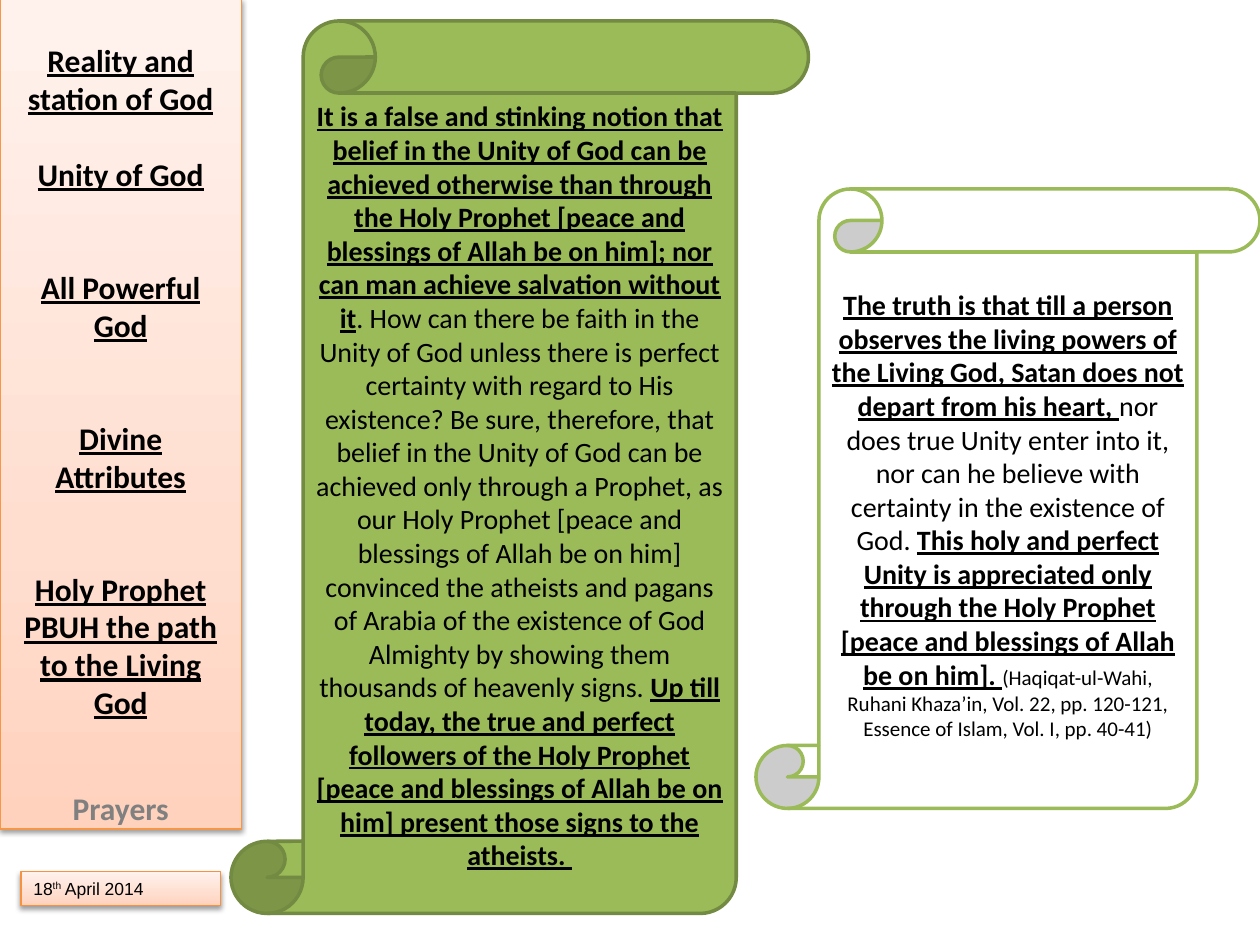
import copy

import pptx
import pptx.dml.color
import pptx.enum.shapes
import pptx.enum.text
import pptx.oxml
import pptx.oxml.ns
import pptx.util

Pt = pptx.util.Pt
SHAPES = pptx.enum.shapes.MSO_SHAPE
ALIGN = pptx.enum.text.PP_ALIGN
ANCHOR = pptx.enum.text.MSO_ANCHOR

PEACH_STOPS = [(0, "FFD2BD"), (0.35, "FFDED0"), (1, "FFF2ED")]
SHADOW_XML = (
    f'<a:outerShdw {pptx.oxml.ns.nsdecls("a")} blurRad="{Pt(3.1)}" dist="{Pt(1.6)}" '
    'dir="5400000" rotWithShape="0">'
    '<a:srgbClr val="000000"><a:alpha val="38000"/></a:srgbClr></a:outerShdw>'
)

# Topic and the space above it
TOPICS = [
    ("Reality and station of God", 0),
    ("Unity of God", 22),
    ("All Powerful God", 43),
    ("Divine Attributes", 43),
    ("Holy Prophet PBUH the path to the Living God", 43),
    ("Prayers", 39),
]
CURRENT_TOPIC = "Prayers"

# Passage parts: text, size, emphasised
NOTION = [
    ("It is a false and stinking notion that belief in the Unity of God can be achieved "
     "otherwise than through the Holy Prophet [peace and blessings of Allah be on him]; "
     "nor can man achieve salvation without it", 16, True),
    (". How can there be faith in the Unity of God unless there is perfect certainty with "
     "regard to His existence? Be sure, therefore, that belief in the Unity of God can be "
     "achieved only through a Prophet, as our Holy Prophet [peace and blessings of Allah be "
     "on him] convinced the atheists and pagans of Arabia of the existence of God Almighty "
     "by showing them thousands of heavenly signs. ", 16, False),
    ("Up till today, the true and perfect followers of the Holy Prophet [peace and blessings "
     "of Allah be on him] present those signs to the atheists. ", 16, True),
]
TRUTH = [
    ("The truth is that till a person observes the living powers of the Living God, Satan "
     "does not depart from his heart, ", 16, True),
    ("nor does true Unity enter into it, nor can he believe with certainty in the existence "
     "of God. ", 16, False),
    ("This holy and perfect Unity is appreciated only through the Holy Prophet [peace and "
     "blessings of Allah be on him]. ", 16, True),
    ("(Haqiqat-ul-Wahi, Ruhani Khaza’in, Vol. 22, pp. 120-121, Essence of Islam, Vol. I, "
     "pp. 40-41)", 12, False),
]


def color(value):
    return pptx.dml.color.RGBColor.from_string(value)


def add_panel(slide, preset, box, line, width):
    panel = slide.shapes.add_shape(preset, *map(Pt, box))
    panel.shadow.inherit = False
    panel.line.color.rgb = color(line)
    panel.line.width = Pt(width)
    panel.text_frame.word_wrap = True
    return panel


def add_run(paragraph, text, size, bold=False, underline=False, ink="000000", face="Calibri"):
    run = paragraph.add_run()
    run.text = text
    run.font.name = face
    run.font.size = Pt(size)
    run.font.bold = bold
    run.font.underline = underline
    run.font.color.rgb = color(ink)
    return run


def add_peach_panel(slide, box, line):
    panel = add_panel(slide, SHAPES.RECTANGLE, box, line, 0.75)
    properties = panel._element.spPr
    # Three-stop gradient, deepest at the bottom
    panel.fill.gradient()
    panel.fill.gradient_angle = 90
    stop_list = properties.find(".//" + pptx.oxml.ns.qn("a:gsLst"))
    stop_list.insert(1, copy.deepcopy(stop_list[0]))
    for stop, (position, shade) in zip(panel.fill.gradient_stops, PEACH_STOPS):
        stop.position = position
        stop.color.rgb = color(shade)
    # Soft shadow below
    effects = properties.find(pptx.oxml.ns.qn("a:effectLst"))
    effects.append(pptx.oxml.parse_xml(SHADOW_XML))
    return panel


def add_scroll(slide, box, fill, line, passage):
    scroll = add_panel(slide, SHAPES.VERTICAL_SCROLL, box, line, 2)
    scroll.fill.solid()
    scroll.fill.fore_color.rgb = color(fill)
    scroll.text_frame.vertical_anchor = ANCHOR.MIDDLE
    paragraph = scroll.text_frame.paragraphs[0]
    paragraph.alignment = ALIGN.CENTER
    for text, size, emphasised in passage:
        add_run(paragraph, text, size, emphasised, emphasised)


def add_topic_menu(slide, box):
    frame = add_peach_panel(slide, box, "F79646").text_frame
    frame.vertical_anchor = ANCHOR.TOP
    frame.margin_top = Pt(24)
    for index, (topic, gap) in enumerate(TOPICS):
        paragraph = frame.add_paragraph() if index else frame.paragraphs[0]
        paragraph.alignment = ALIGN.CENTER
        if gap:
            paragraph.space_before = Pt(gap)
        current = topic == CURRENT_TOPIC
        add_run(paragraph, topic, 18, True, not current, "808080" if current else "000000")


def add_date(slide, box):
    frame = add_peach_panel(slide, box, "F69240").text_frame
    frame.vertical_anchor = ANCHOR.TOP
    paragraph = frame.paragraphs[0]
    paragraph.alignment = ALIGN.LEFT
    add_run(paragraph, "18", 10, face="Arial")
    ordinal = add_run(paragraph, "th", 10, face="Arial")
    ordinal._r.get_or_add_rPr().set("baseline", "30000")
    add_run(paragraph, " April 2014", 10, face="Arial")


def main():
    deck = pptx.Presentation()
    deck.slide_width, deck.slide_height = Pt(720), Pt(540)
    slide = deck.slides.add_slide(deck.slide_layouts[6])

    add_scroll(slide, (132, 12, 330, 510), "9BBB59", "738A42", NOTION)
    add_topic_menu(slide, (0, -0.7, 138, 474.5))
    add_scroll(slide, (432, 108, 288, 354), "FFFFFF", "9BBB59", TRUTH)
    add_date(slide, (12, 498, 114, 19.4))

    deck.save("out.pptx")


if __name__ == "__main__":
    main()
